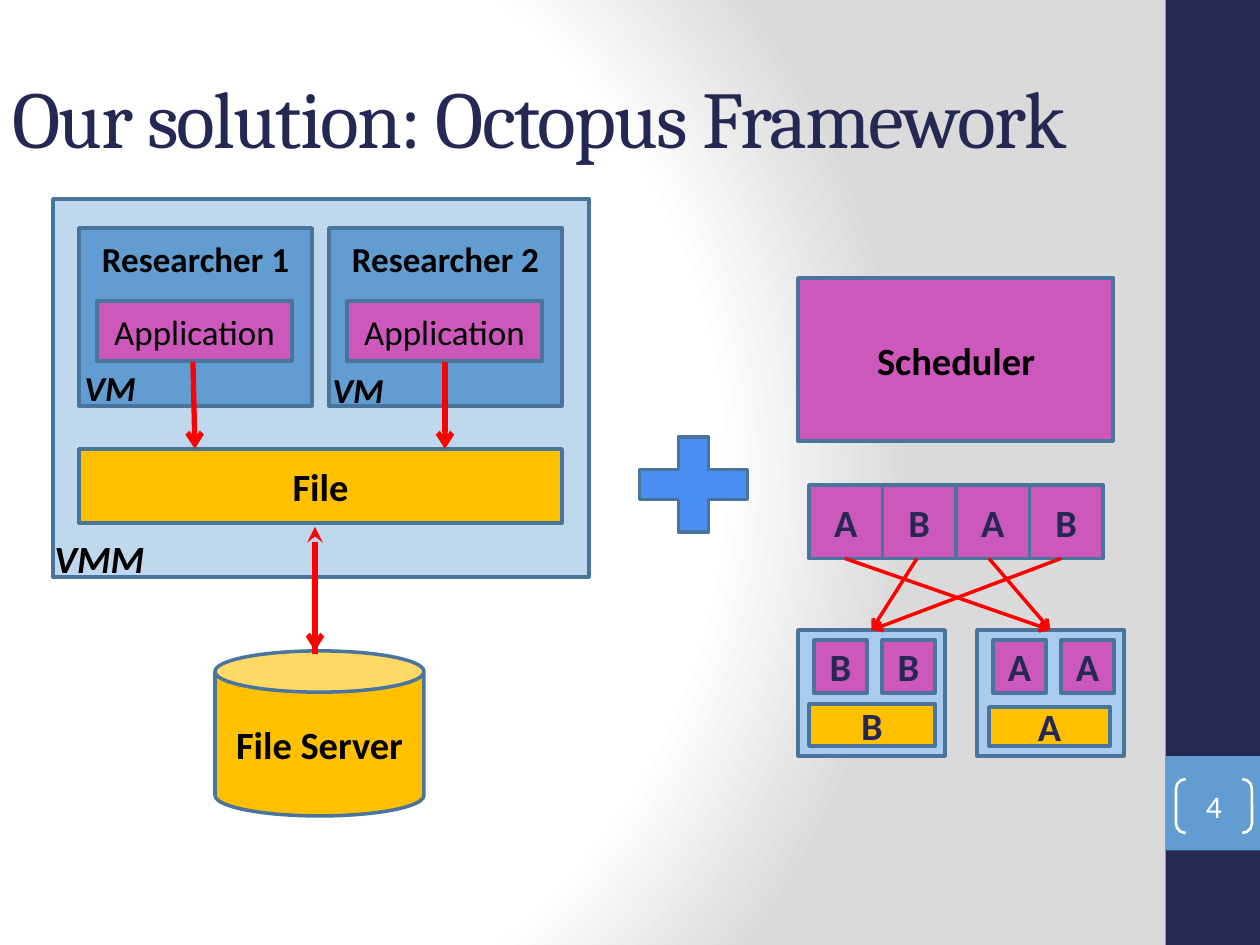
"""Build the Octopus Framework slide: shared file layer plus scheduler."""
from pptx import Presentation
from pptx.dml.color import RGBColor
from pptx.enum.shapes import MSO_CONNECTOR, MSO_SHAPE as SH
from pptx.enum.text import MSO_ANCHOR, PP_ALIGN
from pptx.oxml import parse_xml
from pptx.oxml.ns import nsdecls
from pptx.util import Pt

PX = 914400 / 126
THEME = {
    "navy": "242852", "blue": "629DD1", "pale": "C0D8ED", "host": "A9CCEE",
    "pink": "CC58BB", "gold": "FFC000", "plus": "4A8EF2", "edge": "49749B",
    "red": "FF0000", "white": "FFFFFF", "black": "000000",
    "title": {"size": 46, "name": "Cambria", "color": "navy"},
    "head": {"size": 22, "bold": True},
    "name": {"size": 20, "bold": True},
    "app": {"size": 20},
    "layer": {"size": 22, "bold": True, "italic": True},
    "vm": {"size": 20, "bold": True, "italic": True},
    "block": {"size": 22, "bold": True, "color": "navy"},
    "page": {"size": 18, "color": "white"},
}
TITLE = "Our solution: Octopus Framework"
VMS = [("Researcher 1", 79, 97, 72, 360), ("Researcher 2", 329, 347, 320, 362)]
VM_ARROWS = [(193, 362, 195, 449), (445, 362, 445, 449)]
QUEUE = ["A", "B", "A", "B"]
HOSTS = [("B", (809, 704, 126, 42)), ("A", (989, 707, 121, 39))]
HOST_X, HOST_STEP, HOST_W, HOST_Y = 798, 179, 147, 630
CELL_X, CELL_Y, CELL = 809, 485, 73.5
GRADIENT = (
    f'<p:bg {nsdecls("p", "a")}><p:bgPr><a:gradFill rotWithShape="1"><a:gsLst>'
    '<a:gs pos="0"><a:srgbClr val="FFFFFF"/></a:gs>'
    '<a:gs pos="75000"><a:srgbClr val="FFFFFF"/></a:gs>'
    '<a:gs pos="100000"><a:srgbClr val="DADADA"/></a:gs></a:gsLst>'
    '<a:path path="circle"><a:fillToRect l="20000" t="50000" r="100000" b="50000"/></a:path>'
    '</a:gradFill><a:effectLst/></p:bgPr></p:bg>')


def emu(*lengths):
    return [round(v * PX) for v in lengths]


def rgb(key):
    return RGBColor.from_string(THEME[key])


def write(shape, text, style, align=PP_ALIGN.CENTER, anchor=MSO_ANCHOR.MIDDLE):
    tf = shape.text_frame
    tf.word_wrap, tf.vertical_anchor = True, anchor
    p = tf.paragraphs[0]
    p.alignment = align
    r = p.add_run()
    r.text = text
    values = {"name": "Calibri", "color": "black", **THEME[style]}
    r.font.color.rgb = rgb(values.pop("color"))
    values["size"] = Pt(values["size"])
    for key, value in values.items():
        setattr(r.font, key, value)
    return r


def box(s, at, fill, text="", style="head", kind=SH.RECTANGLE, edge="edge", width=2):
    sp = s.shapes.add_shape(kind, *emu(*at))
    sp.shadow.inherit = False
    if fill:
        sp.fill.solid()
        sp.fill.fore_color.rgb = rgb(fill)
    else:
        sp.fill.background()
    if edge:
        sp.line.color.rgb, sp.line.width = rgb(edge), Pt(width)
    else:
        sp.line.fill.background()
    if text:
        write(sp, text, style)
    return sp


def label(s, at, text, style, align=PP_ALIGN.LEFT, anchor=MSO_ANCHOR.TOP):
    return write(s.shapes.add_textbox(*emu(*at)), text, style, align, anchor)


def arrow(s, ends, width, end="tailEnd", kind="arrow"):
    c = s.shapes.add_connector(MSO_CONNECTOR.STRAIGHT, *emu(*ends))
    c.line.color.rgb, c.line.width = rgb("red"), Pt(width)
    c.line.fill.solid()
    c.line.color.rgb = rgb("red")
    c.element.spPr.find("{*}ln").append(parse_xml(f'<a:{end} {nsdecls("a")} type="{kind}"/>'))
    c.element.spPr.append(parse_xml(f'<a:effectLst {nsdecls("a")}/>'))


def draw_frame(s):
    s.element.cSld.insert(0, parse_xml(GRADIENT))
    box(s, (1165.5, 0, 94.5, 945), "navy", edge=None)
    box(s, (1165.5, 756, 94.5, 94.5), "blue", edge=None)
    r = label(s, (0, 37, 1166, 158), TITLE, "title", anchor=MSO_ANCHOR.MIDDLE)
    r.font.element.set("spc", "-100") if hasattr(r.font, "element") else \
        r.text and s.shapes[-1].element.find(".//{*}rPr").set("spc", "-100")
    page = box(s, (1176, 779, 76, 54), None, "4", "page", SH.DOUBLE_BRACKET, "white", 1.5)
    page.adjustments[0] = 0.18
    tf = page.text_frame
    for side in ("left", "top", "right", "bottom"):
        setattr(tf, f"margin_{side}", 0)


def draw_machine(s):
    box(s, (215, 651, 209, 165), "gold", "File Server", kind=SH.CAN)
    arrow(s, (315, 546, 315, 651), 3)
    box(s, (53, 199, 536, 378), "pale")
    box(s, (79, 449, 483, 74), "gold", "File")
    label(s, (42, 529, 142, 59), "VMM", "layer")
    for name, x, app_x, vm_x, vm_y in VMS:
        box(s, (x, 228, 233, 178), "blue")
        label(s, (x, 231, 233, 55), name, "name", PP_ALIGN.CENTER)
        label(s, (vm_x, vm_y, 83, 55), "VM", "vm")
        box(s, (app_x, 301, 195, 60), "pink", "Application", "app")
    for ends in VM_ARROWS:
        arrow(s, ends, 3)
    arrow(s, (315, 527, 315, 654), 3, "headEnd", "stealth")


def draw_scheduler(s):
    box(s, (620, 420, 147, 129), "plus", kind=SH.MATH_PLUS)
    box(s, (798, 278, 315, 163), "pink")
    label(s, (814, 331, 284, 59), "Scheduler", "head", PP_ALIGN.CENTER)
    for i, job in enumerate(QUEUE):
        box(s, (CELL_X + i * CELL, CELL_Y, CELL, CELL), "pink", job, "block")
    target = {}
    for i, (job, disk) in enumerate(HOSTS):
        x = HOST_X + i * HOST_STEP
        target[job] = x + HOST_W / 2
        box(s, (x, HOST_Y, HOST_W, 126), "host")
        box(s, disk, "gold", job, "block")
        for dx in (16, 84):
            box(s, (x + dx, HOST_Y + 10, 53, 53), "pink", job, "block")
    for i, job in enumerate(QUEUE):
        arrow(s, (845 + 72 * i, CELL_Y + CELL, target[job], HOST_Y), 2)


def main():
    prs = Presentation()
    prs.slide_width, prs.slide_height = emu(1260, 945)
    s = prs.slides.add_slide(prs.slide_layouts[6])
    for draw in (draw_frame, draw_machine, draw_scheduler):
        draw(s)
    prs.save("out.pptx")


if __name__ == "__main__":
    main()
